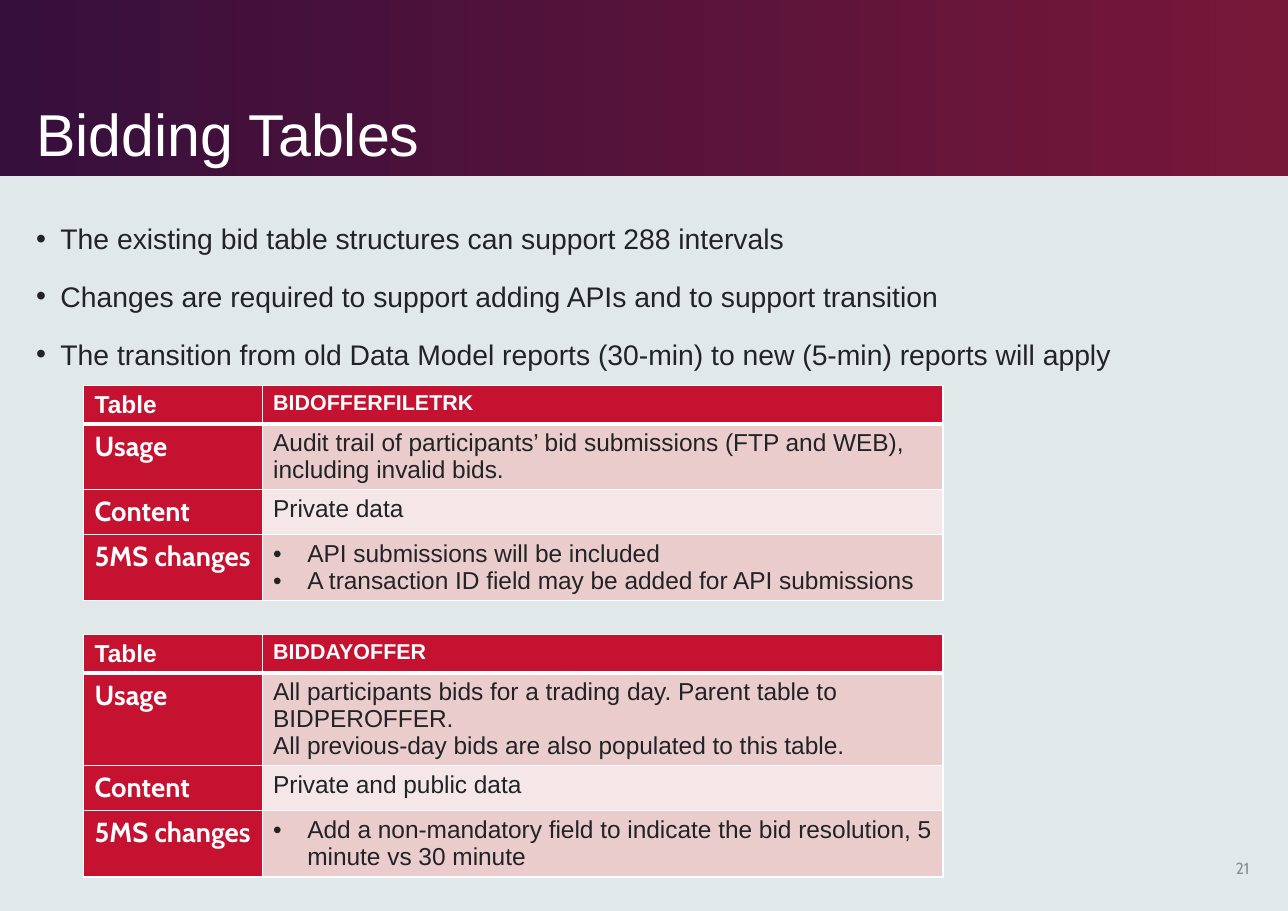
from lxml import etree
from pptx import Presentation
from pptx.dml.color import RGBColor
from pptx.enum.shapes import MSO_SHAPE
from pptx.enum.text import MSO_ANCHOR, PP_ALIGN
from pptx.oxml.ns import qn
from pptx.util import Inches, Pt

RECT = MSO_SHAPE.RECTANGLE
BOTTOM, MIDDLE = MSO_ANCHOR.BOTTOM, MSO_ANCHOR.MIDDLE
RIGHT = PP_ALIGN.RIGHT

COLORS = {
    "page": "E0E8EA", "purple": "360F3C", "wine": "771738", "white": "FFFFFF",
    "red": "C41230", "band": "EACCCD", "pale": "F5E7E8", "ink": "222324", "grey": "8D8D8E",
}
TITLE = "Bidding Tables"
POINTS = [
    "The existing bid table structures can support 288 intervals",
    "Changes are required to support adding APIs and to support transition",
    "The transition from old Data Model reports (30-min) to new (5-min) reports will apply",
]
LABELS = ["Table", "Usage", "Content", "5MS changes"]
TABLES = [
    {
        "top": 3.5,
        "heights": [0.35, 0.59, 0.41, 0.6],
        "values": [
            ["BIDOFFERFILETRK"],
            ["Audit trail of participants’ bid submissions (FTP and WEB), including invalid bids."],
            ["Private data"],
            ["API submissions will be included",
             "A transaction ID field may be added for API submissions"],
        ],
    },
    {
        "top": 5.76,
        "heights": [0.35, 0.84, 0.41, 0.6],
        "values": [
            ["BIDDAYOFFER"],
            ["All participants bids for a trading day. Parent table to BIDPEROFFER.",
             "All previous-day bids are also populated to this table."],
            ["Private and public data"],
            ["Add a non-mandatory field to indicate the bid resolution, 5 minute vs 30 minute"],
        ],
    },
]
TABLE_LEFT = 0.76
COLUMNS = [1.62, 6.18]
PAGE_NUMBER = "21"


def rgb(name):
    return RGBColor.from_string(COLORS[name])


def write(tf, lines, size, color, font="Arial", bold=False):
    tf.text = "\n".join(lines)
    for p in tf.paragraphs:
        for r in p.runs:
            r.font.size = Pt(size)
            r.font.name = font
            r.font.bold = bold
            r.font.color.rgb = rgb(color)


def add_bullets(tf, indent):
    for p in tf.paragraphs:
        pPr = p._p.get_or_add_pPr()
        pPr.set("marL", str(Inches(indent)))
        pPr.set("indent", str(-Inches(indent)))
        etree.SubElement(pPr, qn("a:buFont")).set("typeface", "Arial")
        etree.SubElement(pPr, qn("a:buChar")).set("char", "•")


def set_borders(cell, top, bottom):
    tcPr = cell._tc.get_or_add_tcPr()
    for tag, width in (("lnL", 1), ("lnR", 1), ("lnT", top), ("lnB", bottom)):
        ln = etree.SubElement(tcPr, qn("a:" + tag), w=str(Pt(width)))
        fill = etree.SubElement(ln, qn("a:solidFill"))
        etree.SubElement(fill, qn("a:srgbClr"), val=COLORS["white"])


def style_cell(cell, row, fill):
    set_borders(cell, 3 if row == 1 else 1, 3 if row == 0 else 1)
    cell.fill.solid()
    cell.fill.fore_color.rgb = rgb(fill)


def add_bid_table(s, top, heights, values):
    frame = s.shapes.add_table(len(LABELS), len(COLUMNS), Inches(TABLE_LEFT), Inches(top),
                               Inches(sum(COLUMNS)), Inches(sum(heights)))
    table = frame.table
    for column, width in zip(table.columns, COLUMNS):
        column.width = Inches(width)
    for i, (label, lines, height) in enumerate(zip(LABELS, values, heights)):
        table.rows[i].height = Inches(height)
        head, body = table.cell(i, 0), table.cell(i, 1)
        style_cell(head, i, "red")
        if i == 0:
            style_cell(body, i, "red")
            write(head.text_frame, [label], 16, "white", bold=True)
            write(body.text_frame, lines, 14, "white", bold=True)
        else:
            style_cell(body, i, "band" if i % 2 else "pale")
            write(head.text_frame, [label], 18, "white", "Cabin", True)
            write(body.text_frame, lines, 16, "ink")
        if label == "5MS changes":
            add_bullets(body.text_frame, 0.31)


def add_text(s, left, top, width, height):
    tf = s.shapes.add_textbox(Inches(left), Inches(top), Inches(width), Inches(height)).text_frame
    tf.word_wrap = True
    return tf


def main():
    prs = Presentation()
    prs.slide_width, prs.slide_height = Inches(11.69), Inches(8.27)
    s = prs.slides.add_slide(prs.slide_layouts[5])
    s.background.fill.solid()
    s.background.fill.fore_color.rgb = rgb("page")

    banner = s.shapes.add_shape(RECT, 0, 0, prs.slide_width, Inches(1.6))
    banner.shadow.inherit = False
    banner.line.fill.background()
    banner.fill.gradient()
    banner.fill.gradient_angle = 0
    for stop, color in zip(banner.fill.gradient_stops, ("purple", "wine")):
        stop.color.rgb = rgb(color)
    s.shapes._spTree.insert(2, banner._element)

    title = s.shapes.title
    title.left, title.top = Inches(0.23), Inches(0.16)
    title.width, title.height = Inches(8.63), Inches(1.43)
    write(title.text_frame, [TITLE], 38.6, "white")
    title.text_frame.vertical_anchor = BOTTOM
    title.text_frame.paragraphs[0].alignment = PP_ALIGN.LEFT
    title.text_frame.paragraphs[0].line_spacing = 0.9

    for table in TABLES:
        add_bid_table(s, **table)

    tf = add_text(s, 0.23, 1.87, 11.18, 1.63)
    write(tf, POINTS, 18.5, "ink")
    add_bullets(tf, 0.22)
    for p in tf.paragraphs:
        p.line_spacing = 1.3
        p.space_before = Pt(8.8)

    tf = add_text(s, 10.89, 7.66, 0.55, 0.44)
    write(tf, [PAGE_NUMBER], 10.5, "grey", "Cabin")
    tf.vertical_anchor = MIDDLE
    tf.paragraphs[0].alignment = RIGHT

    prs.save("out.pptx")


if __name__ == "__main__":
    main()
